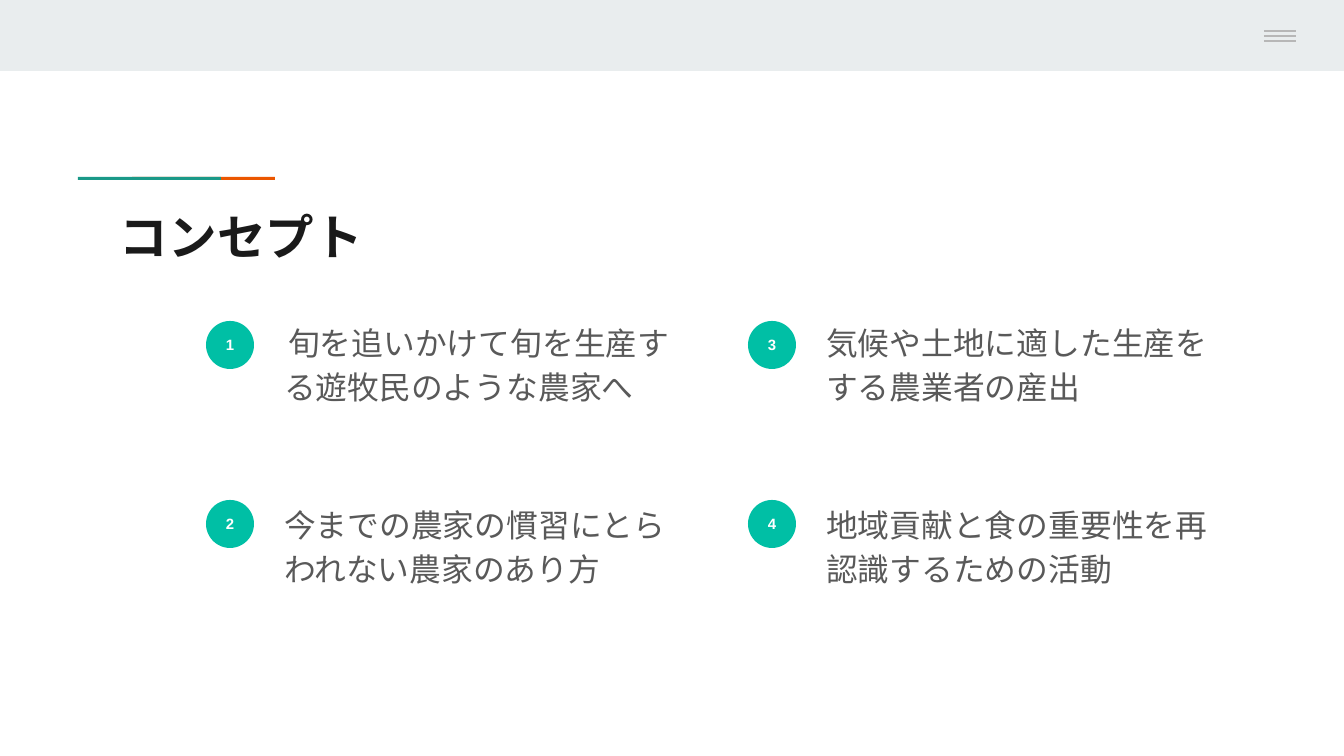
from typing import NamedTuple

from pptx import Presentation
from pptx.dml.color import RGBColor
from pptx.enum.shapes import MSO_CONNECTOR, MSO_SHAPE
from pptx.enum.text import MSO_ANCHOR, PP_ALIGN
from pptx.oxml.ns import qn
from pptx.util import Pt
from lxml import etree

RECT, OVAL = MSO_SHAPE.RECTANGLE, MSO_SHAPE.OVAL
LINE = MSO_CONNECTOR.STRAIGHT
TOP, MIDDLE = MSO_ANCHOR.TOP, MSO_ANCHOR.MIDDLE
CENTER = PP_ALIGN.CENTER

PALE = RGBColor(0xE9, 0xED, 0xEE)
ORANGE = RGBColor(0xEB, 0x56, 0x00)
TEAL = RGBColor(0x1A, 0x99, 0x88)
GREEN = RGBColor(0x00, 0xBF, 0xA5)
GRAY = RGBColor(0xB7, 0xB7, 0xB7)
INK = RGBColor(0x1A, 0x1A, 0x1A)
BODY = RGBColor(0x59, 0x59, 0x59)
WHITE = RGBColor(0xFF, 0xFF, 0xFF)

SCALE = 914400 / 134.4  # EMU in one px
INSET = 13


def px(n: int) -> int:
    return round(n * SCALE)


class Box(NamedTuple):
    left: int
    top: int
    width: int
    height: int

    def emu(self) -> list[int]:
        return [px(n) for n in self]


class Style(NamedTuple):
    name: str
    size: int
    bold: bool
    color: RGBColor


class Point(NamedTuple):
    text: str
    indent: int = 0


TITLE = Style("Manrope", 26, True, INK)
BADGE = Style("Arial", 8, True, WHITE)
PLAIN = Style("Lato", 17, False, BODY)

POINTS = [
    Point("旬を追いかけて旬を生産する遊牧民のような農家へ", 4),
    Point("今までの農家の慣習にとらわれない農家のあり方"),
    Point("気候や土地に適した生産をする農業者の産出"),
    Point("地域貢献と食の重要性を再認識するための活動"),
]


def write(shape, text: str, style: Style, anchor=TOP, **format):
    """Fill a shape with one styled paragraph and return the paragraph."""
    frame = shape.text_frame
    margins = {f"margin_{side}": px(INSET) for side in ("left", "top", "right", "bottom")}
    for key, value in {**margins, "word_wrap": True, "vertical_anchor": anchor}.items():
        setattr(frame, key, value)
    para = frame.paragraphs[0]
    for key, value in format.items():
        setattr(para, key, value)
    run = para.add_run()
    run.text = text
    for key, value in {"name": style.name, "size": Pt(style.size), "bold": style.bold}.items():
        setattr(run.font, key, value)
    run.font.color.rgb = style.color
    return para


def draw(slide, kind, box: Box, fill: RGBColor):
    shape = slide.shapes.add_shape(kind, *box.emu())
    shape.shadow.inherit = False
    shape.fill.solid()
    shape.fill.fore_color.rgb = fill
    shape.line.fill.background()
    return shape


def rule(slide, left: int, right: int, y: int) -> None:
    line = slide.shapes.add_connector(LINE, px(left), px(y), px(right), px(y))
    line.line.color.rgb = GRAY
    line.line.width = Pt(0.75)
    etree.SubElement(line._element.spPr, qn("a:effectLst"))


def entry(slide, index: int, point: Point) -> None:
    """Draw a numbered badge and its text; numbers run down each column."""
    col, row = divmod(index, 2)
    x = 206 + 542 * col
    badge = draw(slide, OVAL, Box(x, 321 + 179 * row, 48, 48), GREEN)
    write(badge, str(index + 1), BADGE, MIDDLE, alignment=CENTER)
    area = slide.shapes.add_textbox(*Box(x + 65, 305 + 182 * row, 417, 155).emu())
    para = write(area, point.text, PLAIN, line_spacing=1.15)
    if point.indent:
        para._p.get_or_add_pPr().set("indent", str(px(point.indent)))


def main() -> None:
    deck = Presentation()
    deck.slide_width, deck.slide_height = px(1344), px(756)
    slide = deck.slides.add_slide(deck.slide_layouts[6])

    # Top band with menu mark
    draw(slide, RECT, Box(0, 0, 1344, 71), PALE)
    for y in (31, 36, 41):
        rule(slide, 1264, 1296, y)

    # Accent bar and title
    draw(slide, RECT, Box(132, 177, 143, 3), ORANGE)
    draw(slide, RECT, Box(78, 177, 143, 3), TEAL)
    title = slide.shapes.add_textbox(*Box(107, 194, 1130, 79).emu())
    write(title, "コンセプト", TITLE)

    # Numbered points
    for index, point in enumerate(POINTS):
        entry(slide, index, point)

    deck.save("out.pptx")


if __name__ == "__main__":
    main()
